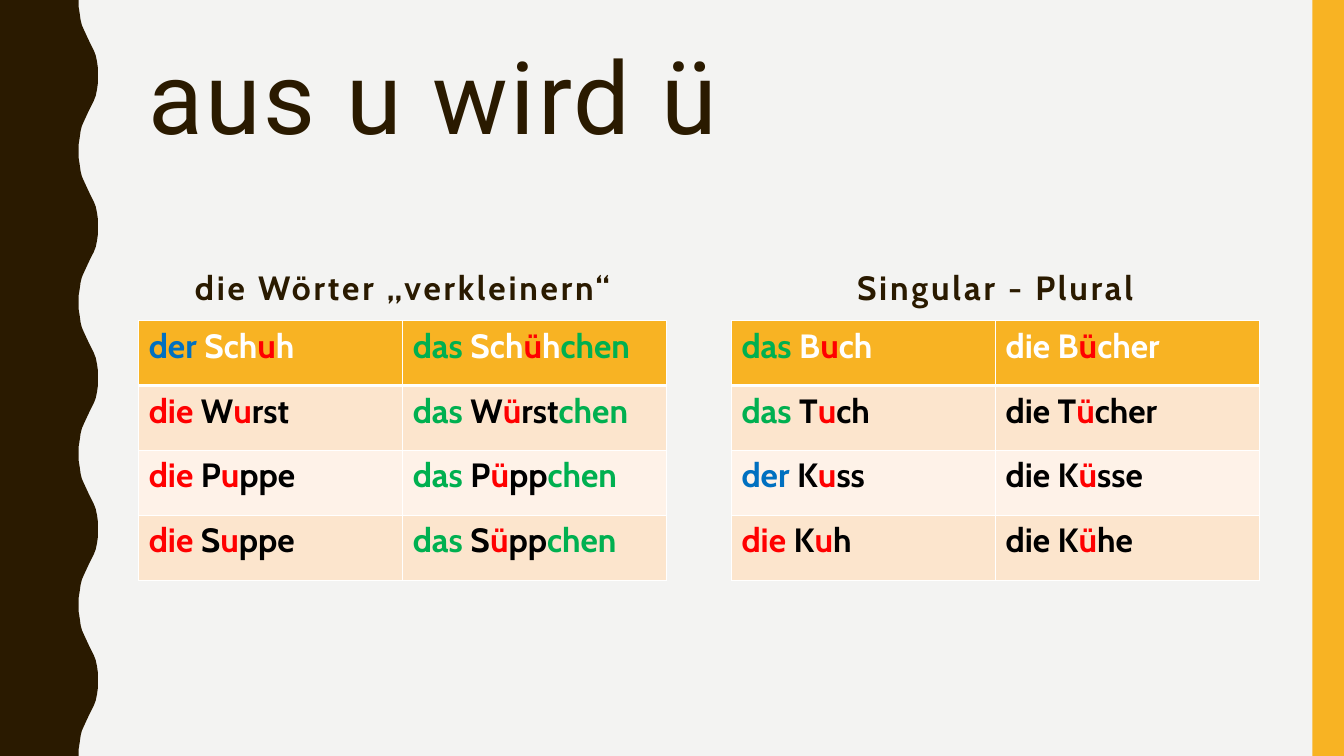
from dataclasses import dataclass

from lxml import etree
from pptx import Presentation
from pptx.dml.color import RGBColor
from pptx.enum import shapes, text
from pptx.oxml import ns
from pptx.util import Pt


@dataclass(frozen=True)
class Theme:
    background: str = "F3F3F2"
    dark: str = "2A1A00"
    accent: str = "F8B323"
    band_odd: str = "FCE5CD"
    band_even: str = "FEF2E8"
    white: str = "FFFFFF"
    black: str = "000000"
    red: str = "FF0000"
    green: str = "00B050"
    blue: str = "0070C0"
    title_font: str = "Roboto"
    body_font: str = "Cabin"
    title_size: int = 72
    body_size: int = 24


THEME = Theme()
ARTICLE_COLORS = {"der": THEME.blue, "die": THEME.red, "das": THEME.green}
SLIDE_WIDTH, SLIDE_HEIGHT = 960, 540

# Each word: article | stem | vowel | rest | suffix
DIMINUTIVES = [
    ("der| Sch|u|h|", "das| Sch|ü|h|chen"),
    ("die| W|u|rst|", "das| W|ü|rst|chen"),
    ("die| P|u|ppe|", "das| P|ü|pp|chen"),
    ("die| S|u|ppe|", "das| S|ü|pp|chen"),
]
PLURALS = [
    ("das| B|u|ch|", "|die B|ü|cher|"),
    ("das| T|u|ch|", "|die T|ü|cher|"),
    ("der| K|u|ss|", "|die K|ü|sse|"),
    ("die| K|u|h|", "|die K|ü|he|"),
]

# Outline of the wave from trough to crest: (x, distance below the trough)
HALF_WAVE = [(56.2, 0), (56.2, 5), (57, 10), (57.6, 14.4), (58.5, 18),
             (59.8, 21), (61.2, 24), (62.6, 27), (64, 30), (65.5, 33),
             (67, 36), (68.4, 39.6), (69.3, 44), (70, 49), (70, 54)]


def rgb(color):
    return RGBColor.from_string(color)


def paint(shape, color):
    shape.shadow.inherit = False
    shape.fill.solid()
    shape.fill.fore_color.rgb = rgb(color)
    shape.line.fill.background()


def add_wave_edge(slide, height, period=108):
    wave = HALF_WAVE + [(x, period - y) for x, y in HALF_WAVE[-2:0:-1]]
    edge = [(x, start + y) for start in range(0, height, period) for x, y in wave]
    edge += [(HALF_WAVE[0][0], height), (0, height)]
    outline = slide.shapes.build_freeform(0, 0)
    outline.add_line_segments([(Pt(x), Pt(y)) for x, y in edge], close=True)
    paint(outline.convert_to_shape(), THEME.dark)


def add_side_bar(slide, left, top, width, height):
    bar = slide.shapes.add_shape(shapes.MSO_SHAPE.RECTANGLE,
                                 Pt(left), Pt(top), Pt(width), Pt(height))
    paint(bar, THEME.accent)


def write_line(frame, wording, font_name, size, bold, align, anchor):
    """Fill a text frame with one line of widely spaced dark text."""
    frame.word_wrap = True
    frame.auto_size = text.MSO_AUTO_SIZE.NONE
    frame.vertical_anchor = anchor
    line = frame.paragraphs[0]
    line.alignment = align
    line.font.name, line.font.size, line.font.bold = font_name, Pt(size), bold
    line.font.color.rgb = rgb(THEME.dark)
    run = line.add_run()
    run.text = wording
    run._r.get_or_add_rPr().set("spc", "200")
    return line


def place_title(slide, wording, left, top, width, height):
    title = slide.shapes.title
    title.left, title.top = Pt(left), Pt(top)
    title.width, title.height = Pt(width), Pt(height)
    line = write_line(title.text_frame, wording, THEME.title_font, THEME.title_size,
                      False, text.PP_ALIGN.LEFT, text.MSO_ANCHOR.TOP)
    line.line_spacing = 0.9


def set_borders(cell, widths):
    """Draw white borders; widths are left, right, top, bottom in points."""
    properties = cell._tc.get_or_add_tcPr()
    for side, width in zip("LRTB", widths):
        border = etree.SubElement(properties, ns.qn(f"a:ln{side}"), w=str(Pt(width)))
        fill = etree.SubElement(border, ns.qn("a:solidFill"))
        etree.SubElement(fill, ns.qn("a:srgbClr"), val=THEME.white)


def write_word(cell, word, base_color):
    parts = word.split("|")
    colors = [ARTICLE_COLORS.get(parts[0]), base_color, THEME.red,
              base_color, THEME.green]
    line = cell.text_frame.paragraphs[0]
    line.font.name, line.font.size = THEME.body_font, Pt(THEME.body_size)
    line.font.bold = True
    for part, color in zip(parts, colors):
        if part:
            run = line.add_run()
            run.text = part
            run.font.color.rgb = rgb(color)


def add_word_panel(slide, heading, pairs, left, top, width):
    # Heading
    heading_box = slide.shapes.add_textbox(Pt(left), Pt(top), Pt(width), Pt(49.7))
    write_line(heading_box.text_frame, heading, THEME.body_font, THEME.body_size,
               True, text.PP_ALIGN.CENTER, text.MSO_ANCHOR.BOTTOM)

    # Word pairs
    row_height = 46.4
    words = slide.shapes.add_table(len(pairs), 2, Pt(left + 0.5), Pt(top + 55.5),
                                   Pt(width - 0.8), Pt(row_height * len(pairs))).table
    for row, pair in enumerate(pairs):
        if row == 0:
            fill, base_color = THEME.accent, THEME.white
        else:
            fill = THEME.band_odd if row % 2 else THEME.band_even
            base_color = THEME.black
        for column, word in enumerate(pair):
            cell = words.cell(row, column)
            set_borders(cell, (1, 1, 3 if row == 1 else 1, 3 if row == 0 else 1))
            cell.fill.solid()
            cell.fill.fore_color.rgb = rgb(fill)
            write_word(cell, word, base_color)


def build_umlaut_slide(presentation):
    slide = presentation.slides.add_slide(presentation.slide_layouts[5])
    slide.background.fill.solid()
    slide.background.fill.fore_color.rgb = rgb(THEME.background)

    # Decoration
    add_wave_edge(slide, SLIDE_HEIGHT)
    add_side_bar(slide, SLIDE_WIDTH - 22.5, 0, 22.5, SLIDE_HEIGHT)

    # Content
    place_title(slide, "aus u wird ü", 98.6, 30.2, 800.6, 117.4)
    add_word_panel(slide, "die Wörter „verkleinern“", DIMINUTIVES, 98.6, 173.5, 378)
    add_word_panel(slide, "Singular - Plural", PLURALS, 522, 173.5, 378)


def main():
    presentation = Presentation()
    presentation.slide_width = Pt(SLIDE_WIDTH)
    presentation.slide_height = Pt(SLIDE_HEIGHT)
    build_umlaut_slide(presentation)
    presentation.save("out.pptx")


if __name__ == "__main__":
    main()
